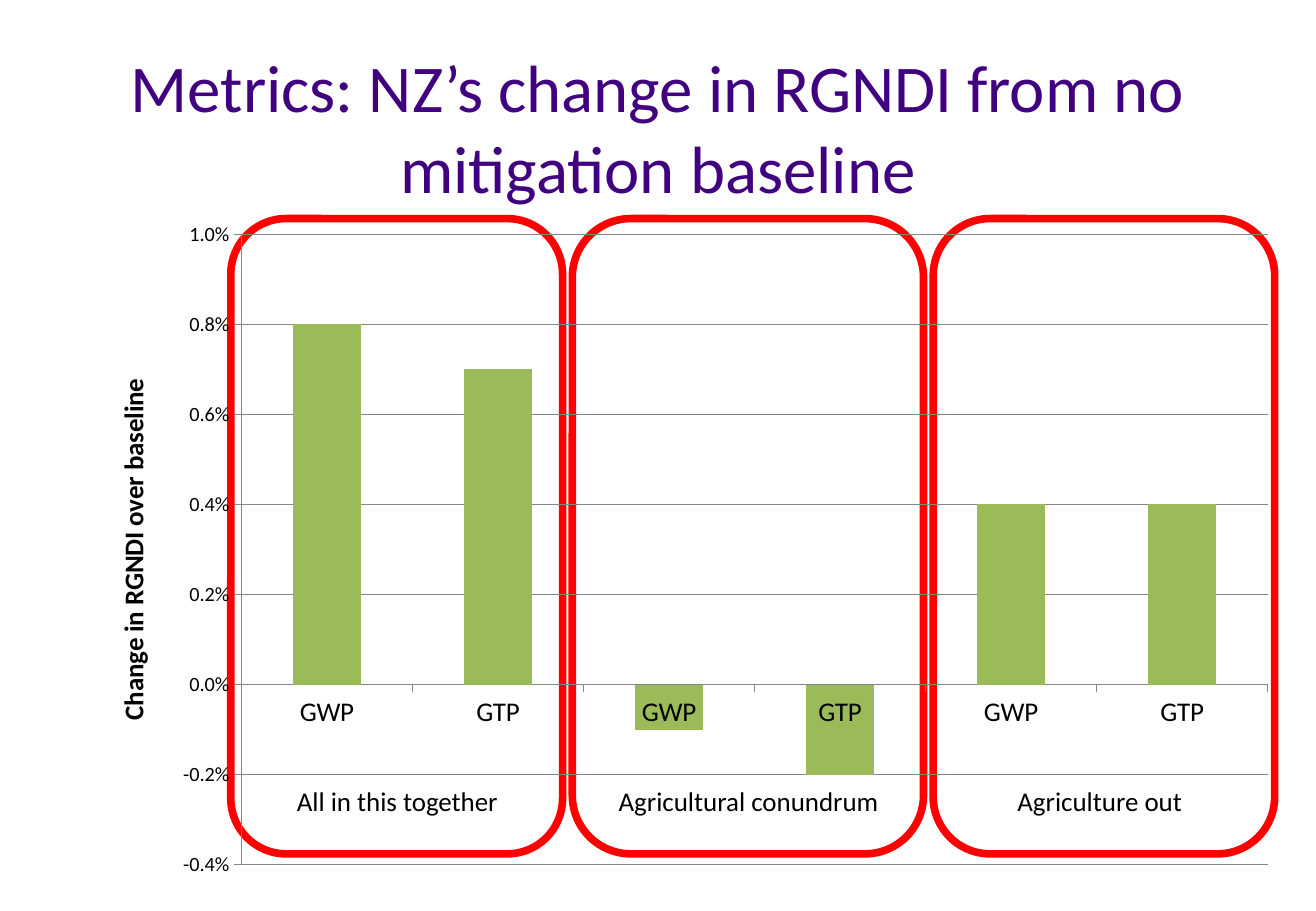
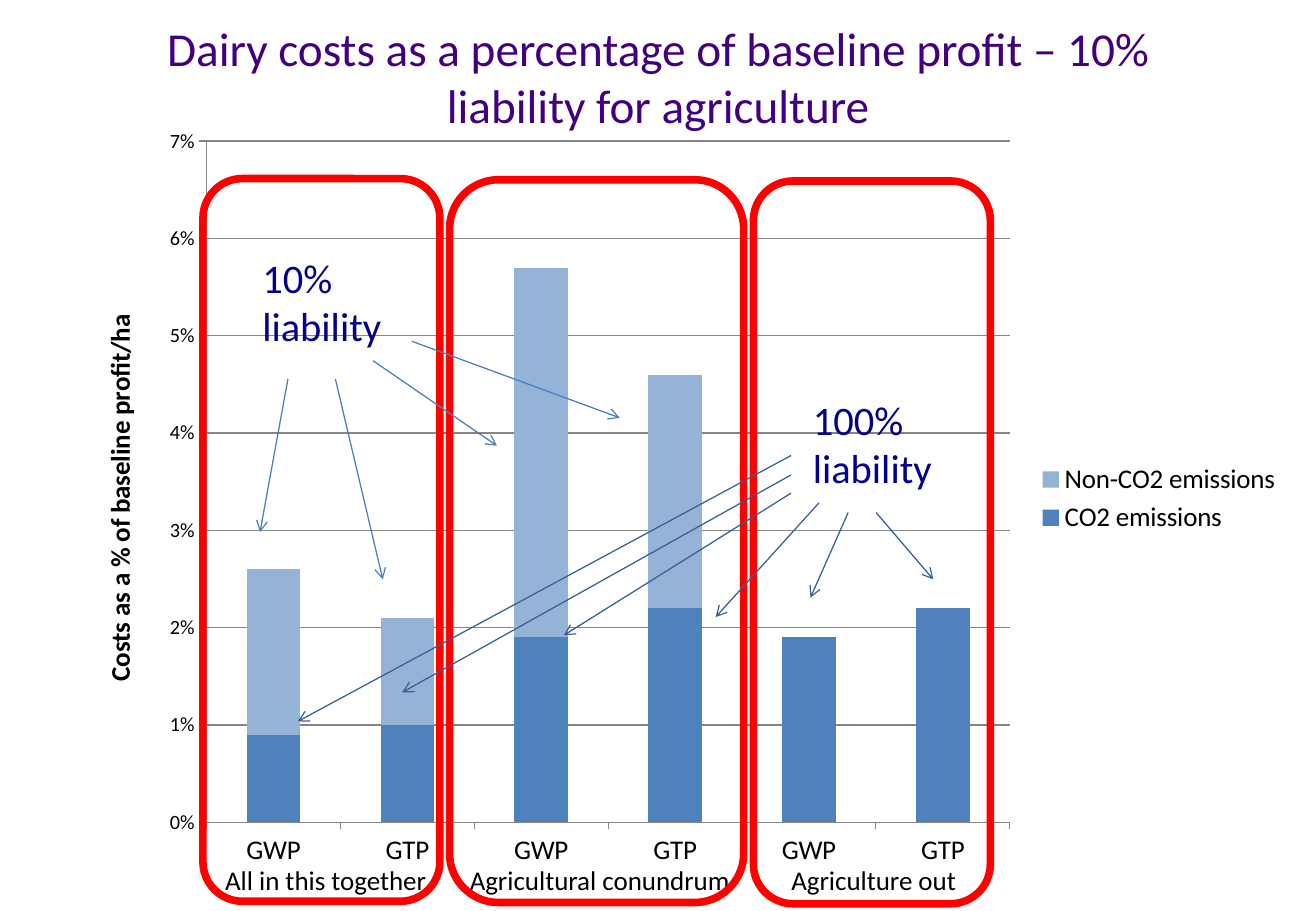
from lxml import etree
from pptx import Presentation, util as u
from pptx.chart.data import CategoryChartData
from pptx.dml.color import RGBColor
from pptx.enum import chart as charts, shapes, text
from pptx.oxml import parse_xml
from pptx.oxml.ns import nsdecls, qn

WIDTH, HEIGHT = 10.83, 7.5
FONT = "Calibri"
BLACK = RGBColor(0x00, 0x00, 0x00)
PURPLE = RGBColor(0x40, 0x00, 0x80)
NAVY = RGBColor(0x03, 0x00, 0x8A)
RED = RGBColor(0xFF, 0x00, 0x00)
GREEN = RGBColor(0x9B, 0xBB, 0x59)
BLUE = RGBColor(0x4F, 0x81, 0xBD)
PALE_BLUE = RGBColor(0x95, 0xB3, 0xD7)
ARROW_BLUE = RGBColor(0x4B, 0x7E, 0xBC)
DARK_BLUE = RGBColor(0x37, 0x60, 0x92)
GREY = RGBColor(0x86, 0x86, 0x86)

METRICS = ["GWP", "GTP"]
SCENARIOS = ["All in this together", "Agricultural conundrum", "Agriculture out"]
LABEL_WIDTH, LABEL_HEIGHT = 2.42, 0.47

SLIDES = [
    dict(
        title="Metrics: NZ’s change in RGNDI from no mitigation baseline",
        title_top=0.33, title_size=39.6,
        frames=[(1.9, 1.8, 2.73), (4.71, 1.8, 2.89), (7.68, 1.8, 2.81)],
        frame_height=5.23, frames_behind=True,
        labels=dict(left=2.06, top=6.41, pitch=2.89),
        chart=dict(
            kind=charts.XL_CHART_TYPE.COLUMN_CLUSTERED,
            area=(0.73, 1.72, 9.9, 5.62), plot=(0.127, 0.037, 0.853, 0.924),
            axis_title="Change in RGNDI over baseline",
            scale=(-0.004, 0.01, 0.002), number_format="0.0%",
            series=[("Series 1", GREEN, [0.008, 0.007, -0.001, -0.002, 0.004, 0.004])]),
        callouts=[],
    ),
    dict(
        title="Dairy costs as a percentage of baseline profit – 10% liability for agriculture",
        title_top=0.11, title_size=28,
        frames=[(1.67, 1.47, 1.95), (3.7, 1.48, 2.42), (6.2, 1.49, 1.95)],
        frame_height=5.95, frames_behind=False,
        labels=dict(left=1.47, top=7.06, pitch=2.255),
        chart=dict(
            kind=charts.XL_CHART_TYPE.COLUMN_STACKED,
            area=(0.65, 0.94, 10, 6.33), plot=(0.105, 0.035, 0.661, 0.886),
            axis_title="Costs as a % of baseline profit/ha",
            scale=(0, 0.07, 0.01), number_format="0%",
            series=[("CO2 emissions", BLUE, [0.009, 0.01, 0.019, 0.022, 0.019, 0.022]),
                    ("Non-CO2 emissions", PALE_BLUE, [0.017, 0.011, 0.038, 0.024, 0, 0])]),
        callouts=[
            ("10% liability", (2.06, 2.03), ARROW_BLUE,
             [(2.76, 3.12, 3.15, 4.77), (3.07, 2.97, 4.09, 3.67),
              (2.37, 3.12, 2.14, 4.38), (3.39, 2.81, 5.1, 3.44)]),
            ("100% liability", (6.59, 3.2), DARK_BLUE,
             [(6.98, 4.22, 6.67, 4.92), (7.21, 4.22, 7.68, 4.77),
              (6.74, 4.14, 5.89, 5.08), (6.51, 4.06, 4.64, 5.23),
              (6.51, 3.91, 3.31, 5.7), (6.51, 3.75, 2.45, 5.94)]),
        ],
    ),
]


def inches(*lengths):
    return [u.Inches(length) for length in lengths]


def style_font(font, size, color=BLACK, bold=False):
    font.name, font.size, font.bold = FONT, u.Pt(size), bold
    font.color.rgb = color


def add_text(page, words, area, size=16, color=BLACK, align=text.PP_ALIGN.CENTER):
    box = page.shapes.add_textbox(*inches(*area))
    box.text_frame.word_wrap = True
    para = box.text_frame.paragraphs[0]
    para.alignment = align
    span = para.add_run()
    span.text = words
    style_font(span.font, size, color)


def add_frames(page, frames, height):
    for left, top, width in frames:
        frame = page.shapes.add_shape(
            shapes.MSO_SHAPE.ROUNDED_RECTANGLE, *inches(left, top, width, height))
        frame.shadow.inherit = False
        frame.fill.background()
        frame.line.color.rgb = RED
        frame.line.width = u.Pt(4.5)


def add_arrow(page, ends, color):
    arrow = page.shapes.add_connector(shapes.MSO_CONNECTOR.STRAIGHT, *inches(*ends))
    arrow.line.color.rgb = color
    arrow.line.width = u.Pt(0.75)
    etree.SubElement(arrow.line._get_or_add_ln(), qn("a:tailEnd"), type="arrow")
    etree.SubElement(arrow._element.spPr, qn("a:effectLst"))


def place_plot(chart, shares):
    fields = "".join(f'<c:{name} val="{share}"/>' for name, share in zip("xywh", shares))
    layout = parse_xml(
        f'<c:layout {nsdecls("c")}><c:manualLayout><c:layoutTarget val="inner"/>'
        f'<c:xMode val="edge"/><c:yMode val="edge"/>{fields}</c:manualLayout></c:layout>')
    area = chart._chartSpace.chart.plotArea
    for old in area.findall(qn("c:layout")):
        area.remove(old)
    area.insert(0, layout)


def add_columns(page, kind, area, plot, axis_title, scale, number_format, series):
    data = CategoryChartData(number_format=number_format)
    data.categories = METRICS * len(SCENARIOS)
    for name, _, values in series:
        data.add_series(name, values)
    chart = page.shapes.add_chart(kind, *inches(*area), data).chart
    style_font(chart.font, 16)
    chart.has_title = False
    place_plot(chart, plot)

    columns = chart.plots[0]
    columns.gap_width = 150
    columns.vary_by_categories = False
    for column, (_, color, _) in zip(columns.series, series):
        column.invert_if_negative = False
        column.format.fill.solid()
        column.format.fill.fore_color.rgb = color

    values = chart.value_axis
    values.minimum_scale, values.maximum_scale, values.major_unit = scale
    values.tick_labels.number_format = number_format
    values.tick_labels.number_format_is_linked = False
    style_font(values.tick_labels.font, 12)
    values.has_major_gridlines = True
    values.axis_title.text_frame.text = axis_title
    style_font(values.axis_title.text_frame.paragraphs[0].runs[0].font, 16, bold=True)
    for part in (values, values.major_gridlines, chart.category_axis):
        part.format.line.color.rgb = GREY
        part.format.line.width = u.Pt(0.75)
    for axis in (values, chart.category_axis):
        axis.major_tick_mark = charts.XL_TICK_MARK.OUTSIDE

    chart.has_legend = len(series) > 1
    if chart.has_legend:
        chart.legend.position = charts.XL_LEGEND_POSITION.RIGHT
        chart.legend.include_in_layout = False
        style_font(chart.legend.font, 16)


def build_slide(deck, content):
    page = deck.slides.add_slide(deck.slide_layouts[6])
    margin = WIDTH / 13
    add_text(page, content["title"],
             (margin, content["title_top"], WIDTH - 2 * margin, 1.25),
             size=content["title_size"], color=PURPLE)
    if content["frames_behind"]:
        add_frames(page, content["frames"], content["frame_height"])
    add_columns(page, **content["chart"])
    labels = content["labels"]
    for index, scenario in enumerate(SCENARIOS):
        left = labels["left"] + index * labels["pitch"]
        add_text(page, scenario, (left, labels["top"], LABEL_WIDTH, LABEL_HEIGHT))
    if not content["frames_behind"]:
        add_frames(page, content["frames"], content["frame_height"])
    for words, corner, color, arrows in content["callouts"]:
        add_text(page, words, (*corner, 1.41, 0.91), size=24, color=NAVY,
                 align=text.PP_ALIGN.LEFT)
        for ends in arrows:
            add_arrow(page, ends, color)


def main():
    deck = Presentation()
    deck.slide_width, deck.slide_height = inches(WIDTH, HEIGHT)
    for content in SLIDES:
        build_slide(deck, content)
    deck.save("out.pptx")


if __name__ == "__main__":
    main()
